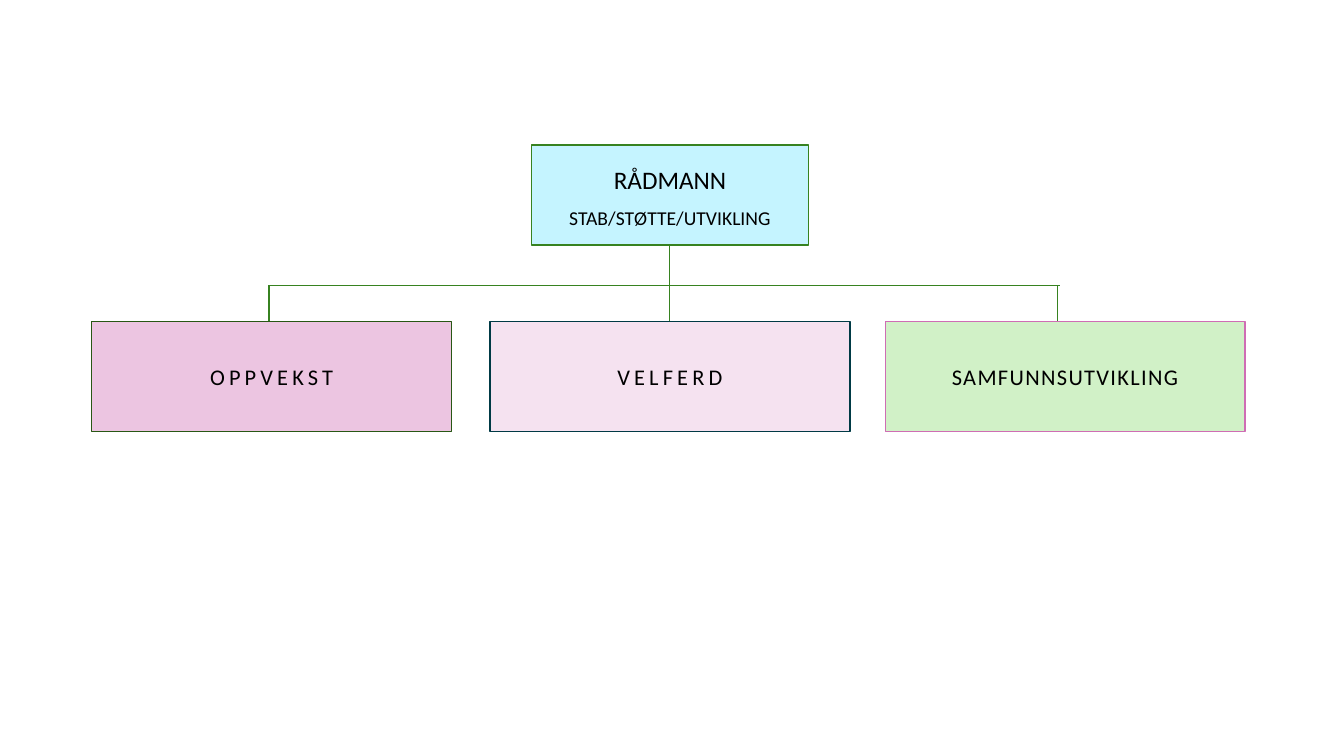
from pptx import Presentation
from pptx.dml.color import RGBColor
from pptx.enum.shapes import MSO_CONNECTOR as CONN, MSO_SHAPE as SHAPE
from pptx.enum.text import MSO_ANCHOR as ANCHOR, PP_ALIGN as ALIGN
from pptx.oxml.ns import qn
from pptx.util import Inches, Pt
from lxml import etree


def rgb(value):
    return RGBColor.from_string(value)


def add_run(p, text, size=16, font="Calibri", color="000000", spacing=0):
    r = p.add_run()
    r.text = text
    r.font.size = Pt(size)
    r.font.name = font
    r.font.color.rgb = rgb(color)
    if spacing:
        r.font._element.set("spc", str(spacing * 100))


class OrgChart:
    green = "378220"
    line_width = Pt(1)

    def __init__(self, slide):
        self.slide = slide

    def line(self, x1, y1, x2, y2):
        ends = [Inches(v) for v in (x1, y1, x2, y2)]
        c = self.slide.shapes.add_connector(CONN.STRAIGHT, *ends)
        c.line.color.rgb = rgb(self.green)
        c.line.width = self.line_width
        etree.SubElement(c._element.spPr, qn("a:effectLst"))

    def box(self, x, y, w, h, fill, line, top=0.05, bottom=0.05):
        sp = self.slide.shapes.add_shape(
            SHAPE.RECTANGLE, Inches(x), Inches(y), Inches(w), Inches(h))
        sp.shadow.inherit = False
        sp.fill.solid()
        sp.fill.fore_color.rgb = rgb(fill)
        sp.line.color.rgb = rgb(line)
        sp.line.width = self.line_width
        tf = sp.text_frame
        tf.word_wrap = True
        tf.vertical_anchor = ANCHOR.MIDDLE
        tf.margin_left = tf.margin_right = Inches(0.04)
        tf.margin_top, tf.margin_bottom = Inches(top), Inches(bottom)
        p = tf.paragraphs[0]
        p.alignment = ALIGN.CENTER
        return p

    def unit(self, x, name, fill, line, spacing):
        p = self.box(x, 3.19, 3.57, 1.09, fill, line)
        add_run(p, name, spacing=spacing)

    def leader(self, name, staff):
        p = self.box(5.27, 1.44, 2.75, 0.99, "C5F4FF", self.green, top=0, bottom=0.12)
        p.line_spacing = 1.5
        add_run(p, name, size=18)
        p.add_line_break()
        add_run(p, staff, size=14)


def main():
    prs = Presentation()
    prs.slide_width, prs.slide_height = Inches(13.33), Inches(7.5)
    chart = OrgChart(prs.slides.add_slide(prs.slide_layouts[6]))

    bar_y, left_x, right_x = 2.83, 2.67, 10.49
    chart.line(6.64, 1.79, 6.64, 3.76)
    chart.line(right_x + 0.02, bar_y, left_x, bar_y)
    for x in (left_x, right_x):
        chart.line(x, bar_y, x, 3.18)

    units = [
        (0.91, "OPPVEKST", "ECC5E1", "285714", 3),
        (4.86, "VELFERD", "F5E2F0", "003A45", 3),
        (8.78, "SAMFUNNSUTVIKLING", "D1F1C7", "CF6DB4", 1),
    ]
    for unit in units:
        chart.unit(*unit)
    chart.leader("RÅDMANN", "STAB/STØTTE/UTVIKLING")

    prs.save("out.pptx")


if __name__ == "__main__":
    main()
